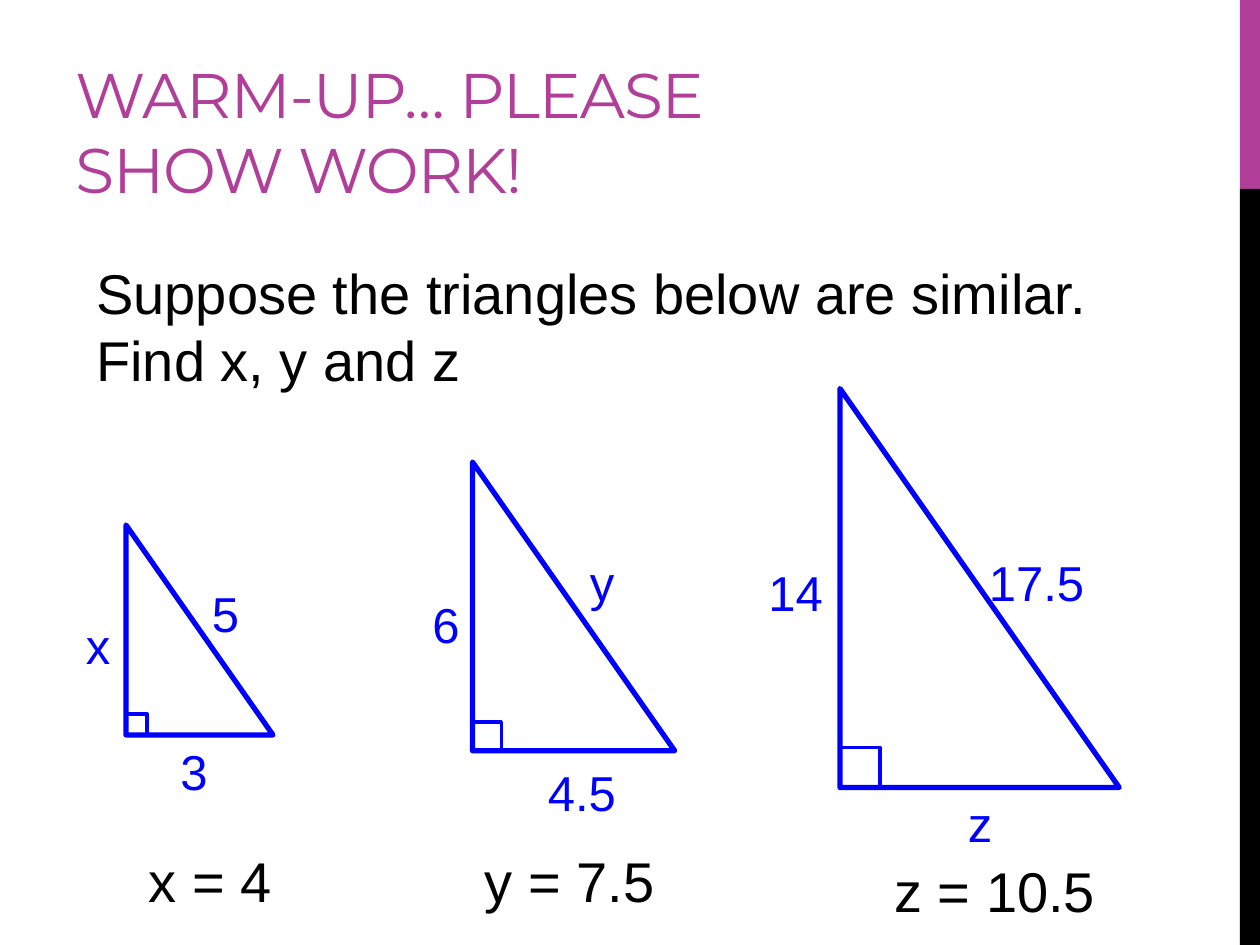
from pptx import Presentation
from pptx.dml.color import RGBColor
from pptx.enum.shapes import MSO_SHAPE
from pptx.enum.text import MSO_ANCHOR, MSO_AUTO_SIZE
from pptx.util import Pt

RECTANGLE = MSO_SHAPE.RECTANGLE
RIGHT_TRIANGLE = MSO_SHAPE.RIGHT_TRIANGLE
BOTTOM = MSO_ANCHOR.BOTTOM
GROW = MSO_AUTO_SIZE.SHAPE_TO_FIT_TEXT
PURPLE = RGBColor(0xB1, 0x3F, 0x9A)
BLUE = RGBColor(0x00, 0x00, 0xFF)
BLACK = RGBColor(0x00, 0x00, 0x00)

presentation = Presentation()
presentation.slide_width = Pt(720)
presentation.slide_height = Pt(540)
slide = presentation.slides.add_slide(presentation.slide_layouts[6])


def add_text(text, left, top, width, height, size, color, font="Arial"):
    box = slide.shapes.add_textbox(Pt(left), Pt(top), Pt(width), Pt(height))
    box.text_frame.word_wrap = True
    box.text_frame.auto_size = GROW
    run = box.text_frame.paragraphs[0].add_run()
    run.text = text
    run.font.name = font
    run.font.size = Pt(size)
    run.font.color.rgb = color
    return box


def add_outline(shapes, kind, left, top, width, height, weight):
    shape = shapes.add_shape(kind, Pt(left), Pt(top), Pt(width), Pt(height))
    shape.shadow.inherit = False
    shape.fill.background()
    shape.line.color.rgb = BLUE
    shape.line.width = Pt(weight)


for top, height, color in [(0, 108, PURPLE), (108, 432, BLACK)]:
    band = slide.shapes.add_shape(RECTANGLE, Pt(708.5), Pt(top), Pt(11.5), Pt(height))
    band.shadow.inherit = False
    band.fill.solid()
    band.fill.fore_color.rgb = color
    band.line.fill.background()

title = add_text("WARM-UP… PLEASE SHOW WORK!", 36, 12, 456, 108, 36, PURPLE, "Montserrat")
title.text_frame.auto_size = MSO_AUTO_SIZE.NONE
title.text_frame.vertical_anchor = BOTTOM
title.text_frame.margin_bottom = Pt(2)
title.text_frame.paragraphs[0].runs[0].font._element.set("spc", "-60")

for left, top, height in [(72, 300, 120), (270, 264, 165), (480, 222, 228)]:
    group = slide.shapes.add_group_shape()
    corner = height / 10
    add_outline(group.shapes, RIGHT_TRIANGLE, left, top, height * 0.7, height, 3)
    add_outline(group.shapes, RECTANGLE, left, top + height - corner, corner, corner, 2)

add_text("Suppose the triangles below are similar. Find x, y and z",
         48, 144, 606, 85, 32, BLACK)

side_labels = [
    ("x", 42, 348, 36), ("y", 330, 312, 36), ("z", 546, 450, 36),
    ("3", 96, 420, 36), ("5", 114, 330, 36), ("4.5", 306, 432, 96),
    ("6", 240, 336, 36), ("14", 432, 318, 54), ("17.5", 558, 312, 90),
]
for text, left, top, width in side_labels:
    add_text(text, left, top, width, 41, 28, BLUE)

answers = [("x = 4", 78, 480, 108), ("y = 7.5", 270, 480, 168), ("z = 10.5", 504, 486, 144)]
for text, left, top, width in answers:
    add_text(text, left, top, width, 45, 32, BLACK)

presentation.save("out.pptx")
